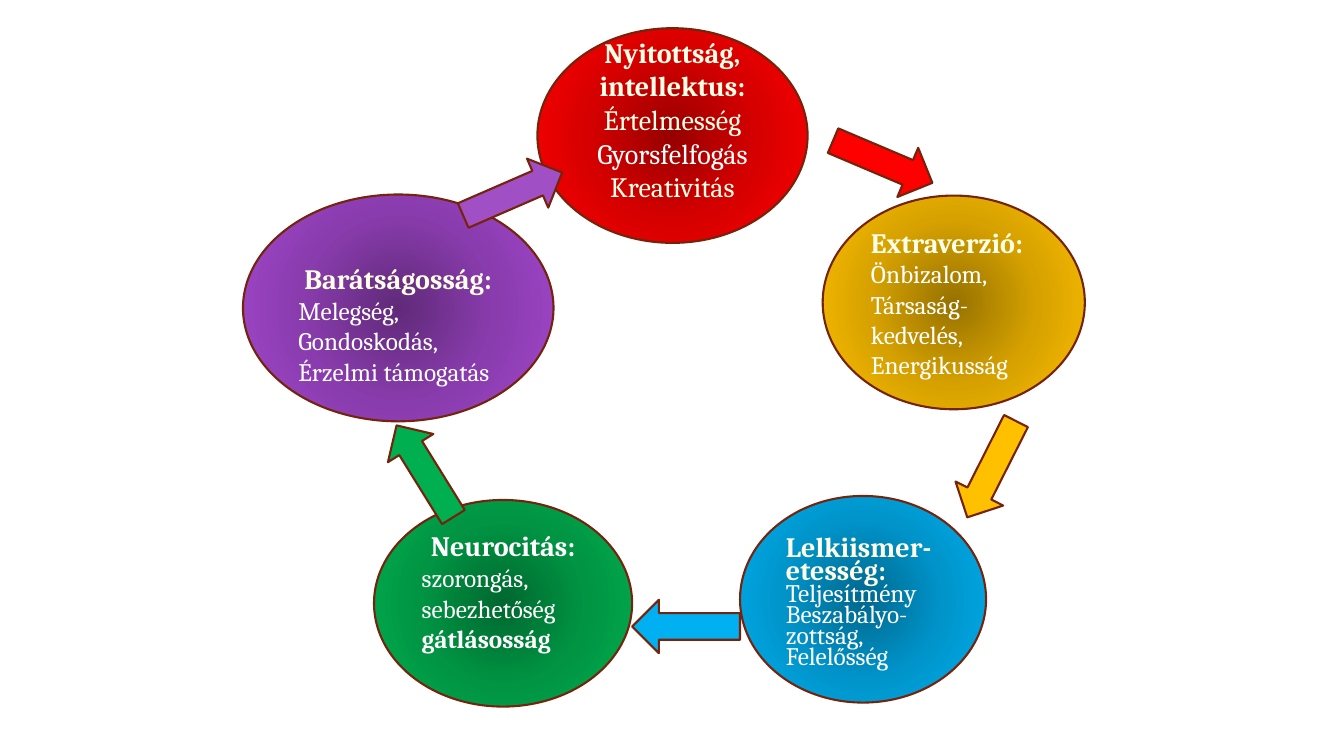
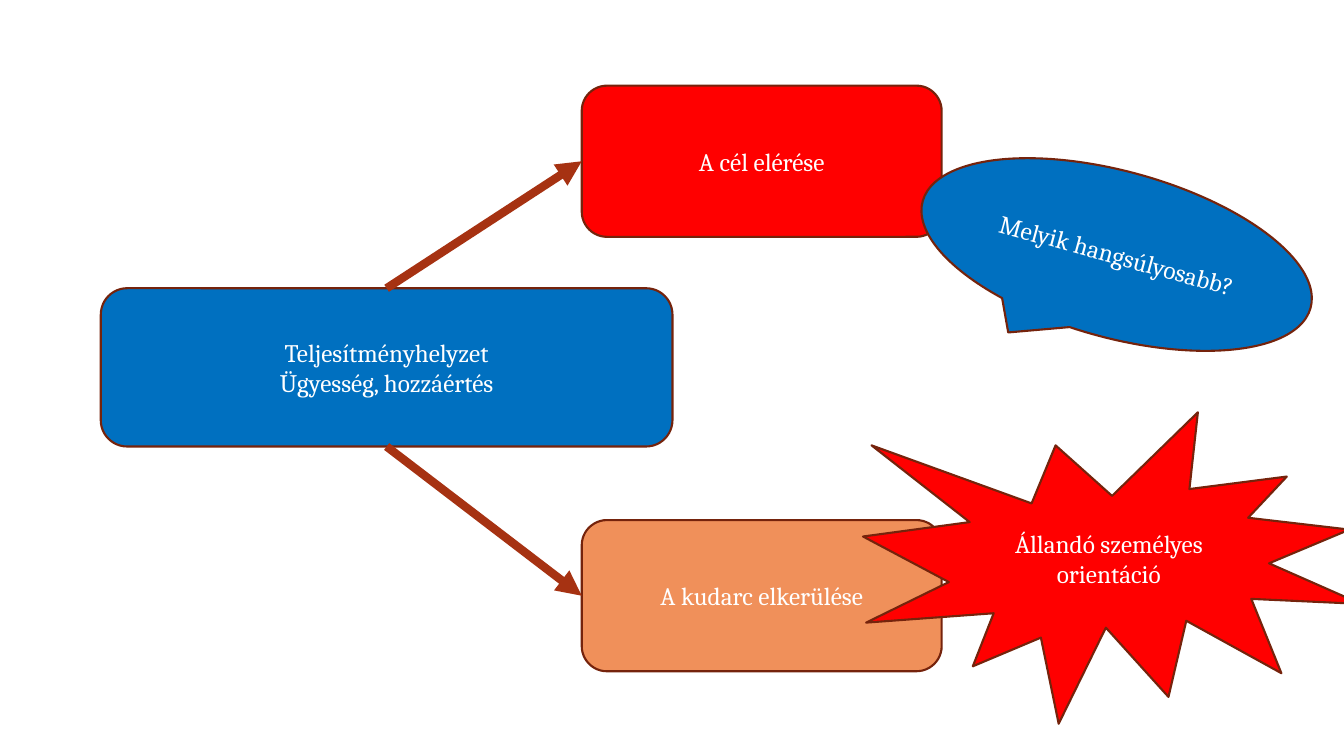
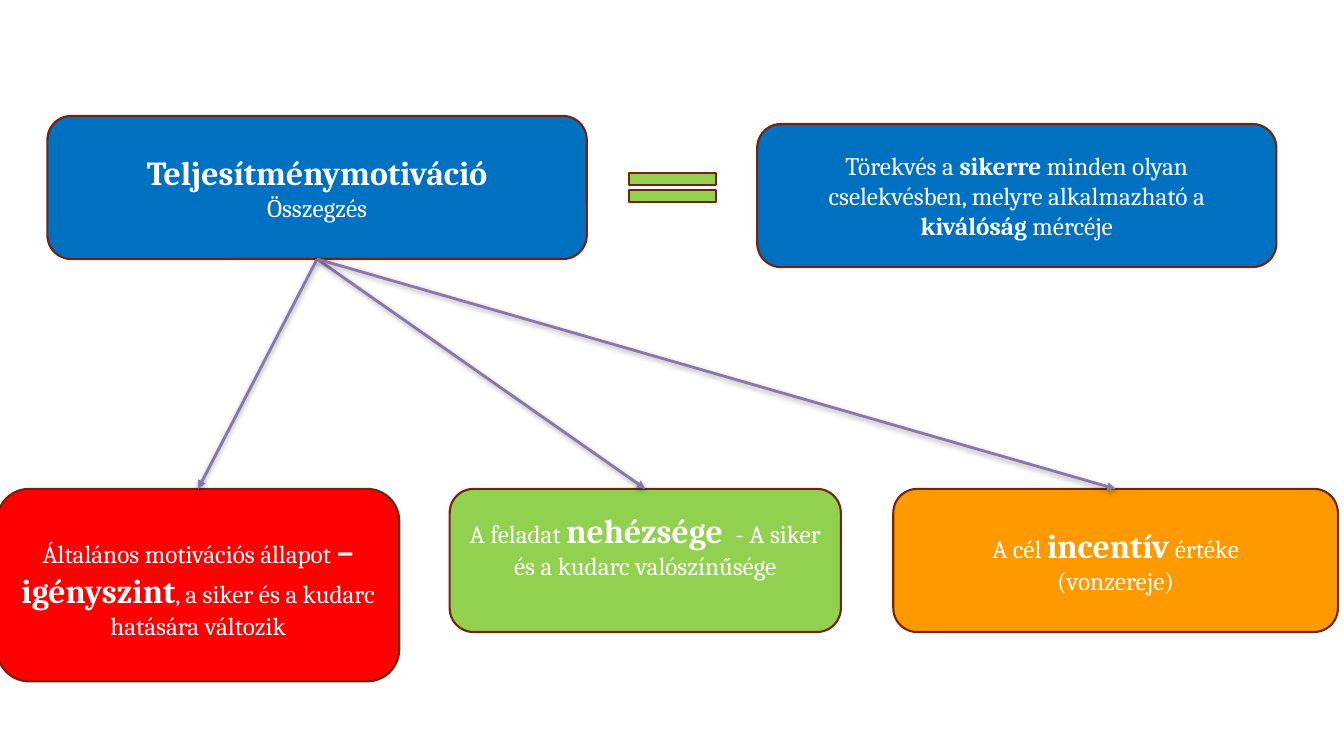
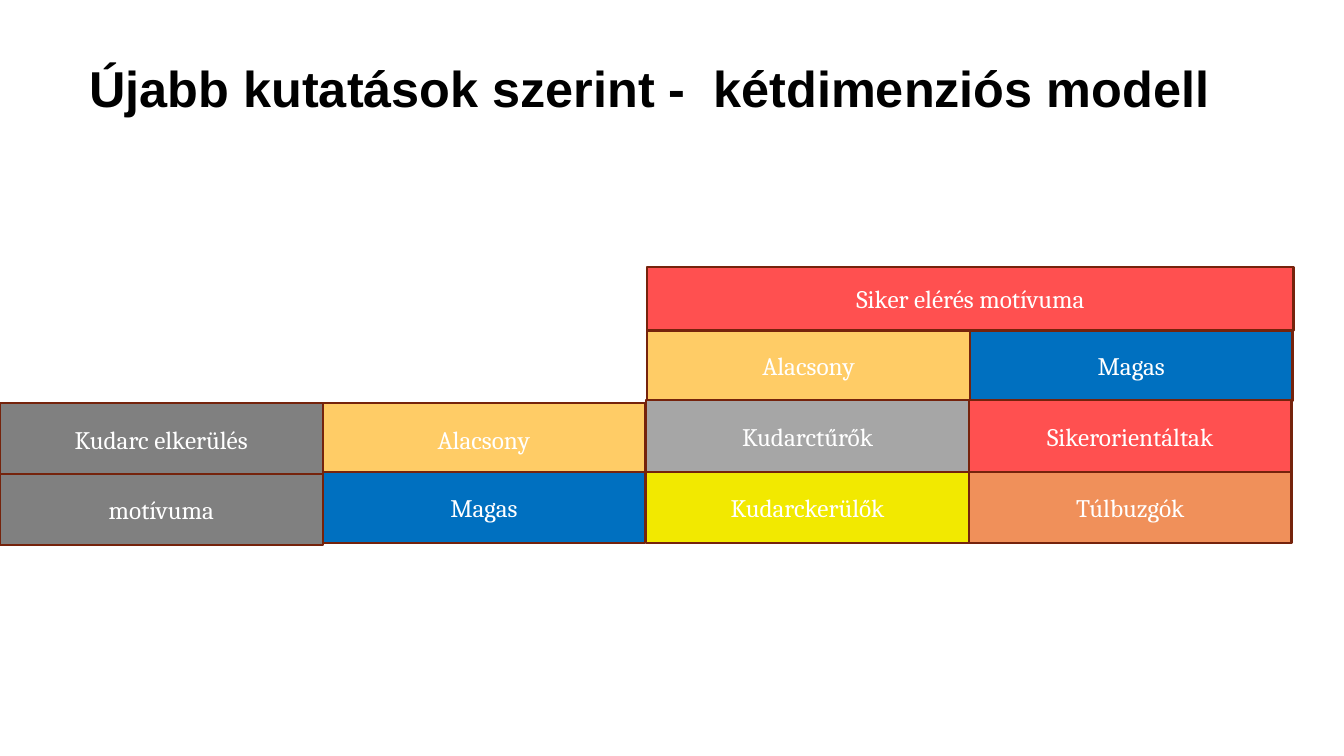
from dataclasses import dataclass

from lxml import etree
from pptx import Presentation
from pptx import util as u
from pptx.dml.color import RGBColor
from pptx.enum import shapes, text
from pptx.oxml import parse_xml
from pptx.oxml.ns import qn

PX = 9144  # EMU per px, 100 px to the inch
SHAPE = shapes.MSO_SHAPE
LEFT, CENTER = text.PP_ALIGN.LEFT, text.PP_ALIGN.CENTER
NS = 'xmlns:a="http://schemas.openxmlformats.org/drawingml/2006/main"'
TOP_SITE, LEFT_SITE, BOTTOM_SITE = 0, 1, 2


@dataclass(frozen=True)
class Theme:
    font: str = "Cambria"
    title_font: str = "Arial"
    body: int = 18
    heading: int = 20
    strong: int = 24
    title: int = 36
    outline: float = 1.5
    border: str = "75230C"
    white: str = "FFFFFF"
    ivory: str = "FFFEE6"
    black: str = "000000"
    red: str = "FF0000"
    coral: str = "FF5050"
    orange: str = "FF9900"
    peach: str = "F0905A"
    gold: str = "FFC000"
    sand: str = "FFCC66"
    yellow: str = "F2E900"
    lime: str = "92D050"
    green: str = "00B050"
    sky: str = "00B0F0"
    blue: str = "0070C0"
    purple: str = "A347CD"
    violet: str = "A050C4"
    lilac: str = "8976AC"
    rust: str = "A63212"
    silver: str = "A6A6A6"
    gray: str = "808080"


T = Theme()


@dataclass(frozen=True)
class Run:
    text: str
    size: int = T.body
    bold: bool = False
    color: str = T.white
    font: str = T.font


@dataclass(frozen=True)
class Para:
    runs: tuple[Run, ...]
    align: text.PP_ALIGN = CENTER
    spacing: float = 1.0


@dataclass(frozen=True)
class Box:
    left: int
    top: int
    width: int
    height: int


@dataclass(frozen=True)
class Trait:
    box: Box
    color: str
    paras: tuple[Para, ...]
    shift: int = 0


@dataclass(frozen=True)
class Arrow:
    left: int
    top: int
    color: str
    kind: SHAPE = SHAPE.RIGHT_ARROW
    rotation: float = 0


@dataclass(frozen=True)
class GridRow:
    left: int
    top: int
    cells: tuple[tuple[str, str], ...]


def line(content: str, align: text.PP_ALIGN = CENTER, spacing: float = 1.0, **style) -> Para:
    return Para((Run(content, **style),), align, spacing)


def heading(content: str, align: text.PP_ALIGN = CENTER, spacing: float = 1.0,
            color: str = T.ivory) -> Para:
    return line(content, align, spacing, size=T.heading, bold=True, color=color)


def emu(box: Box) -> tuple[int, int, int, int]:
    return box.left * PX, box.top * PX, box.width * PX, box.height * PX


def write(tf, paras: tuple[Para, ...]) -> None:
    tf.word_wrap = True
    for i, para in enumerate(paras):
        p = tf.paragraphs[0] if i == 0 else tf.add_paragraph()
        p.alignment = para.align
        p.line_spacing = para.spacing
        for run in para.runs:
            r = p.add_run()
            r.text = run.text
            r.font.name = run.font
            r.font.size = u.Pt(run.size)
            r.font.bold = run.bold
            r.font.color.rgb = RGBColor.from_string(run.color)


def add_block(s, kind: SHAPE, box: Box, color: str, paras: tuple[Para, ...] = (),
              shift: int = 0, rotation: float = 0):
    """Outlined shape; shift moves its centred text down (or up, if negative)."""
    sp = s.shapes.add_shape(kind, *emu(box))
    sp.shadow.inherit = False
    sp.rotation = rotation
    sp.fill.solid()
    sp.fill.fore_color.rgb = RGBColor.from_string(color)
    sp.line.color.rgb = RGBColor.from_string(T.border)
    sp.line.width = u.Pt(T.outline)
    tf = sp.text_frame
    tf.vertical_anchor = text.MSO_ANCHOR.MIDDLE
    tf.margin_top = (5 + max(0, 2 * shift)) * PX
    tf.margin_bottom = (5 + max(0, -2 * shift)) * PX
    write(tf, paras)
    return sp


def shade_from_centre(sp, color: str) -> None:
    """Replace the solid fill by a radial one, dark in the middle."""
    stops = ""
    for pos, factor in ((0, 0.592), (50, 0.843), (100, 1)):
        shade = RGBColor(*(round(c * factor) for c in RGBColor.from_string(color)))
        stops += f'<a:gs pos="{pos * 1000}"><a:srgbClr val="{shade}"/></a:gs>'
    grad = parse_xml(
        f'<a:gradFill {NS} rotWithShape="1"><a:gsLst>{stops}</a:gsLst><a:path path="circle">'
        '<a:fillToRect l="50000" t="50000" r="50000" b="50000"/></a:path></a:gradFill>')
    solid = sp.element.spPr.find(qn("a:solidFill"))
    solid.getparent().replace(solid, grad)


def connect(s, start, start_site: int, end, end_site: int, color: str, width: int,
            shadow: bool = False) -> None:
    cx = s.shapes.add_connector(shapes.MSO_CONNECTOR.STRAIGHT, 0, 0, 0, 0)
    cx.begin_connect(start, start_site)
    cx.end_connect(end, end_site)
    cx.line.color.rgb = RGBColor.from_string(color)
    cx.line.width = u.Pt(width)
    etree.SubElement(cx.line._get_or_add_ln(), qn("a:tailEnd"), type="triangle")
    effects = etree.SubElement(cx.element.spPr, qn("a:effectLst"))
    if shadow:
        effects.append(parse_xml(
            f'<a:outerShdw {NS} blurRad="{u.Pt(4)}" dist="{u.Pt(1)}" dir="5400000" '
            f'rotWithShape="0"><a:srgbClr val="{T.black}"><a:alpha val="37000"/>'
            '</a:srgbClr></a:outerShdw>'))


def traits_slide(s) -> None:
    tight = 0.7
    traits = (
        Trait(Box(241, 193, 308, 225), T.purple, (
            heading("Barátságosság:"),
            line("Melegség,", LEFT),
            line("Gondoskodás, Érzelmi támogatás", LEFT)), 16),
        Trait(Box(533, 28, 268, 213), T.red, (
            heading("Nyitottság, intellektus:"),
            line("Értelmesség", size=T.heading, color=T.ivory),
            line("Gyorsfelfogás", size=T.heading),
            line("Kreativitás", size=T.heading, color=T.ivory)), -16),
        Trait(Box(734, 492, 244, 205), T.sky, (
            heading("Lelkiismer-etesség:", LEFT, tight),
            line("Teljesítmény Beszabályo-zottság,", LEFT, tight),
            line("Felelősség", LEFT, tight)), 5),
        Trait(Box(816, 194, 260, 212), T.gold, (
            heading("Extraverzió:", LEFT),
            line("Önbizalom,  Társaság-kedvelés, Energikusság", LEFT))),
        Trait(Box(371, 496, 256, 205), T.green, (
            heading("Neurocitás:", color=T.white),
            line("szorongás, sebezhetőség", LEFT),
            line("gátlásosság", LEFT, bold=True)), -12),
    )
    arrows = (
        Arrow(455, 166, T.violet, rotation=336.5),
        Arrow(822, 134, T.red, rotation=23),
        Arrow(930, 439, T.gold, rotation=116.8),
        Arrow(627, 595, T.sky, SHAPE.LEFT_ARROW),
        Arrow(368, 441, T.green, SHAPE.LEFT_ARROW, 58.2),
    )
    for trait in traits:
        sp = add_block(s, SHAPE.OVAL, trait.box, trait.color, trait.paras, trait.shift)
        shade_from_centre(sp, trait.color)
    for arrow in arrows:
        add_block(s, arrow.kind, Box(arrow.left, arrow.top, 107, 53), arrow.color,
                  rotation=arrow.rotation)


def situation_slide(s) -> None:
    situation = add_block(s, SHAPE.ROUNDED_RECTANGLE, Box(100, 286, 567, 157), T.blue,
                          (line("Teljesítményhelyzet"), line("Ügyesség, hozzáértés")))
    outcomes = [
        add_block(s, SHAPE.ROUNDED_RECTANGLE, Box(577, top, 357, 150), color, (line(label),))
        for top, color, label in ((85, T.red, "A cél elérése"),
                                  (516, T.peach, "A kudarc elkerülése"))
    ]
    add_block(s, SHAPE.OVAL_CALLOUT, Box(908, 170, 399, 165), T.blue,
              (line("Melyik hangsúlyosabb?"),), rotation=15.4)
    add_block(s, SHAPE.EXPLOSION1, Box(856, 409, 494, 309), T.red,
              (line("Állandó személyes orientáció"),))
    for site, outcome in zip((TOP_SITE, BOTTOM_SITE), outcomes):
        connect(s, situation, site, outcome, LEFT_SITE, T.rust, 6)


def summary_slide(s) -> None:
    motivation = add_block(s, SHAPE.ROUNDED_RECTANGLE, Box(47, 115, 535, 142), T.blue, (
        line("Teljesítménymotiváció", size=T.strong, bold=True), line("Összegzés")))
    add_block(s, SHAPE.ROUNDED_RECTANGLE, Box(751, 123, 515, 142), T.blue, (Para((
        Run("Törekvés a "), Run("sikerre", bold=True),
        Run(" minden olyan cselekvésben, melyre alkalmazható a "),
        Run("kiválóság ", bold=True), Run("mércéje"))),))
    factors = (
        Trait(Box(-3, 485, 399, 191), T.red, (Para((
            Run("Általános motivációs állapot "), Run("– igényszint", T.strong, True),
            Run(", a siker és a kudarc hatására változik"))),)),
        Trait(Box(446, 485, 388, 142), T.lime, (Para((
            Run("A feladat "), Run("nehézsége ", T.strong, True),
            Run(" - A siker és a kudarc valószínűsége"))),), -15),
        Trait(Box(886, 485, 441, 142), T.orange, (
            Para((Run("A cél "), Run("incentív", T.strong, True), Run(" értéke"))),
            line("(vonzereje)"))),
    )
    blocks = [add_block(s, SHAPE.ROUNDED_RECTANGLE, f.box, f.color, f.paras, f.shift)
              for f in factors]
    add_block(s, SHAPE.MATH_EQUAL, Box(608, 162, 118, 48), T.lime)
    for block in blocks:
        connect(s, motivation, BOTTOM_SITE, block, TOP_SITE, T.lilac, 2, shadow=True)


def model_slide(s) -> None:
    tf = s.shapes.add_textbox(*emu(Box(79, 52, 1207, 71))).text_frame
    write(tf, (line("Újabb kutatások szerint -  kétdimenziós modell", LEFT, size=T.title,
                    bold=True, color=T.black, font=T.title_font),))
    tf.auto_size = text.MSO_AUTO_SIZE.SHAPE_TO_FIT_TEXT
    cell_width, cell_height = 320, 71
    low, high = ("Alacsony", T.sand), ("Magas", T.blue)
    rows = (
        GridRow(642, 327, (low, high)),
        GridRow(641, 397, (("Kudarctűrők", T.silver), ("Sikerorientáltak", T.coral))),
        GridRow(641, 468, (("Kudarckerülők", T.yellow), ("Túlbuzgók", T.peach))),
        GridRow(320, 400, (low,)),
        GridRow(320, 468, (high,)),
        GridRow(0, 400, (("Kudarc elkerülés", T.gray),)),
        GridRow(0, 470, (("motívuma", T.gray),)),
    )
    for row in rows:
        for col, (label, color) in enumerate(row.cells):
            box = Box(row.left + col * cell_width, row.top, cell_width, cell_height)
            add_block(s, SHAPE.RECTANGLE, box, color, (line(label),))
    add_block(s, SHAPE.RECTANGLE, Box(642, 265, 641, 63), T.coral,
              (line("Siker elérés motívuma"),))


def main() -> None:
    prs = Presentation()
    prs.slide_width, prs.slide_height = 1333 * PX, 750 * PX
    for build in (traits_slide, situation_slide, summary_slide, model_slide):
        build(prs.slides.add_slide(prs.slide_layouts[6]))
    prs.save("out.pptx")


if __name__ == "__main__":
    main()
